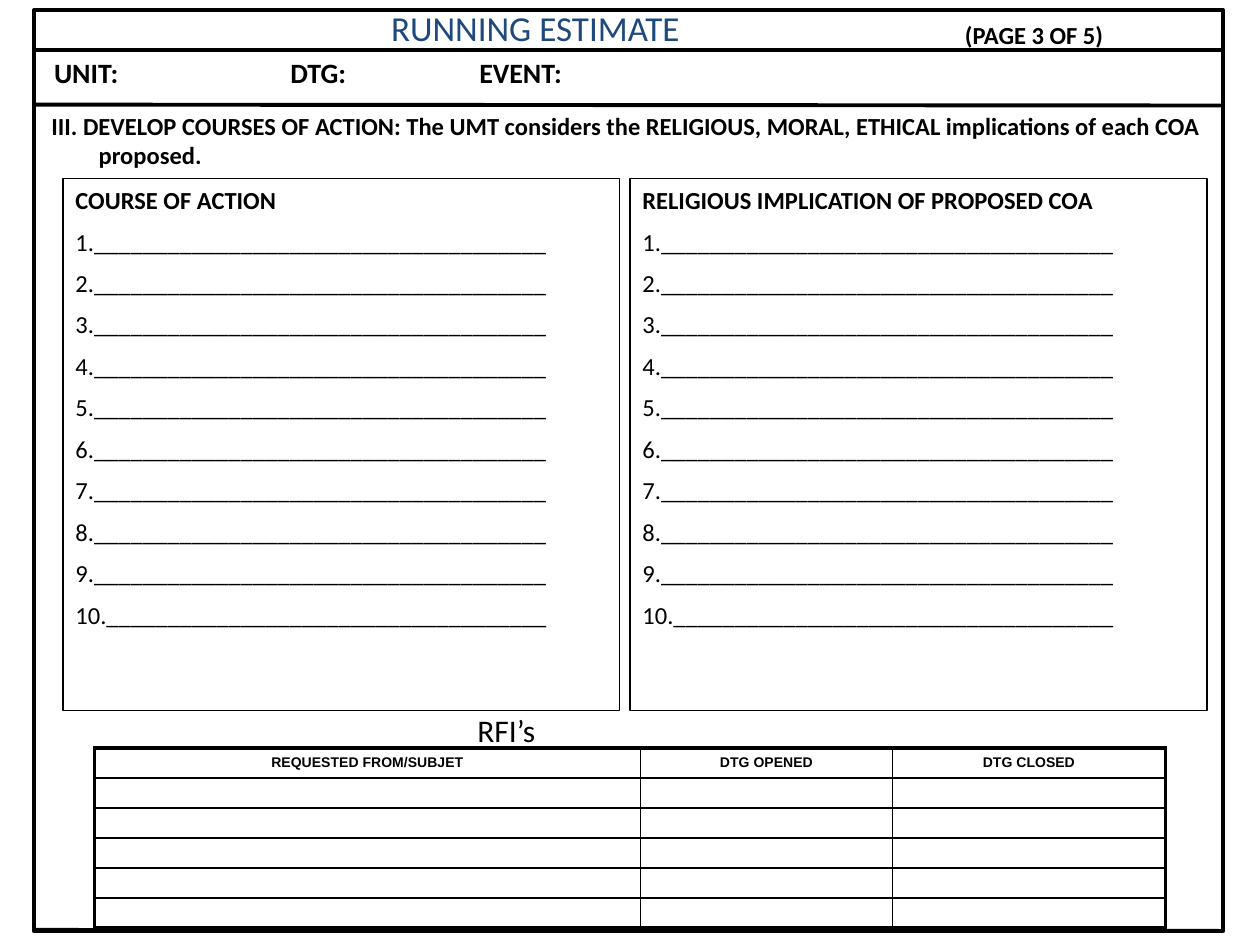
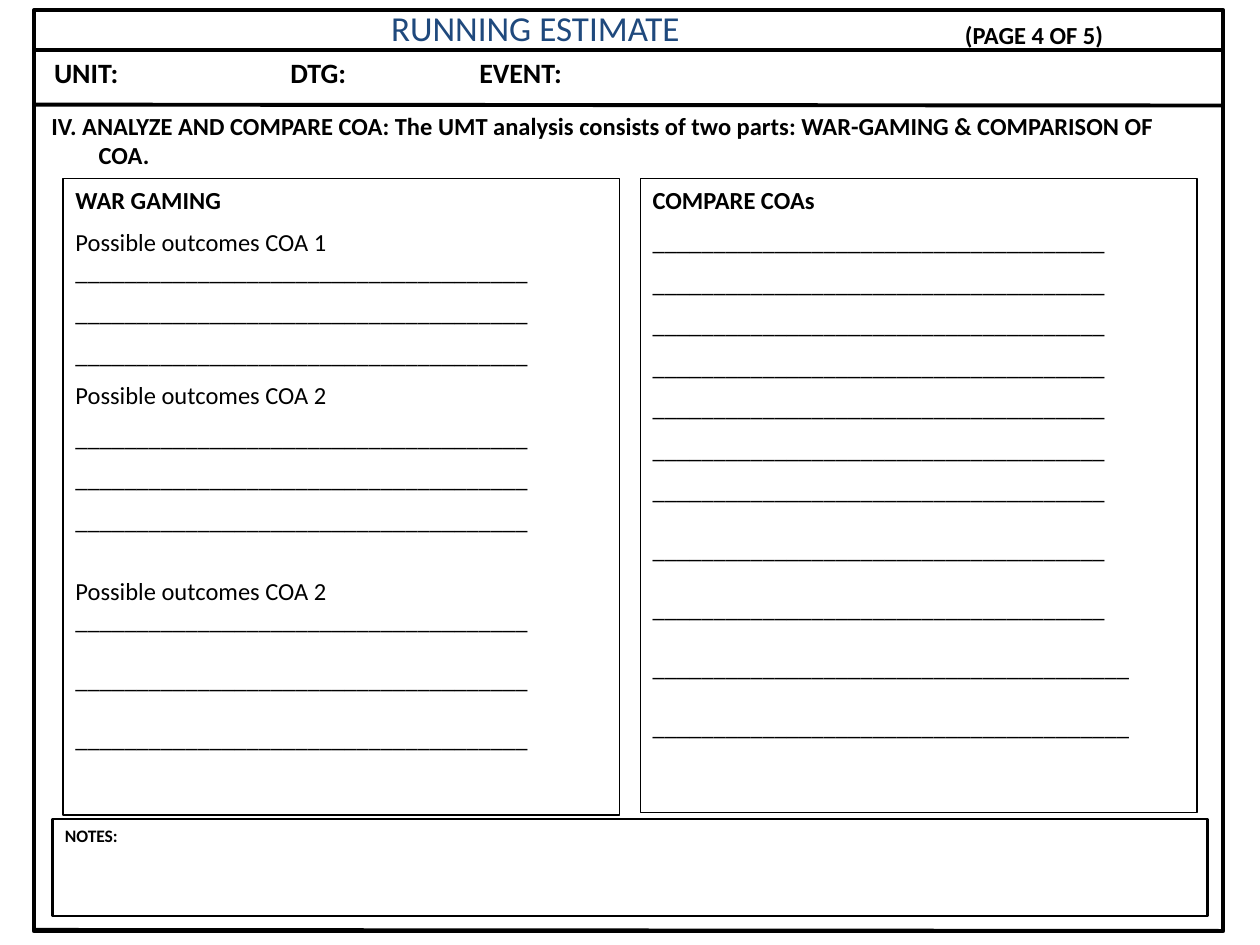
import pptx
import pptx.dml.color
import pptx.enum.shapes
import pptx.enum.text
import pptx.oxml
import pptx.oxml.ns
import pptx.util

Pt = pptx.util.Pt
ALIGN = pptx.enum.text.PP_ALIGN
ANCHOR = pptx.enum.text.MSO_ANCHOR
INK, TITLE_BLUE = "000000", "1F497D"
BODY, TABLE_FONT = "Calibri", "Arial"
FRAME_LINE, NOTES_LINE, PANEL_LINE, GRID_LINE = 2.25, 1.5, 0.75, 1
LINE_STEP, LIST_GAP = 16.9, 6.9  # one 14 pt line, and the gap before a list line
HANGING = 27
RULE = "_" * 37


def color(value):
    return pptx.dml.color.RGBColor.from_string(value)


def assign(target, values):
    for name, value in values.items():
        setattr(target, name, value)


class Form:
    """Holds the form's style and the slide being filled."""

    def __init__(self):
        self.deck = pptx.Presentation()
        assign(self.deck, {"slide_width": Pt(720), "slide_height": Pt(540)})
        self.slide = None

    def new_slide(self):
        self.slide = self.deck.slides.add_slide(self.deck.slide_layouts[6])

    def style_run(self, run, size, bold=False, ink=INK, font=BODY):
        assign(run.font, {"name": font, "size": Pt(size), "bold": bold})
        run.font.color.rgb = color(ink)

    def fill_lines(self, frame, lines, size, align=ALIGN.LEFT, wrap=True, **style):
        """Each line is (text, bold, space before)."""
        assign(frame, {"word_wrap": wrap, "vertical_anchor": ANCHOR.TOP})
        for index, (text, bold, gap) in enumerate(lines):
            paragraph = frame.add_paragraph() if index else frame.paragraphs[0]
            assign(paragraph, {"alignment": align, "space_before": Pt(gap)})
            run = paragraph.add_run()
            run.text = text
            self.style_run(run, size, bold, **style)

    def text(self, box, words, size, bold=False, hanging=0, **style):
        frame = self.slide.shapes.add_textbox(*map(Pt, box)).text_frame
        self.fill_lines(frame, [(words, bold, 0)], size, **style)
        if hanging:
            properties = frame.paragraphs[0]._p.get_or_add_pPr()
            properties.set("marL", str(Pt(hanging)))
            properties.set("indent", str(-Pt(hanging)))

    def panel(self, box, weight, lines=(), size=14):
        kind = pptx.enum.shapes.MSO_SHAPE.RECTANGLE
        panel = self.slide.shapes.add_shape(kind, *map(Pt, box))
        panel.shadow.inherit = False
        panel.fill.background()
        panel.line.color.rgb = color(INK)
        panel.line.width = Pt(weight)
        if lines:
            self.fill_lines(panel.text_frame, lines, size)

    def rule(self, *ends):
        straight = pptx.enum.shapes.MSO_CONNECTOR.STRAIGHT
        rule = self.slide.shapes.add_connector(straight, *map(Pt, ends))
        rule.line.color.rgb = color(INK)
        rule.line.width = Pt(FRAME_LINE)
        rule._element.spPr.append(pptx.oxml.parse_xml(
            f'<a:effectLst {pptx.oxml.ns.nsdecls("a")}/>'))

    def cell_borders(self, cell, weights):
        for side, weight in weights.items():
            cell._tc.get_or_add_tcPr().append(pptx.oxml.parse_xml(
                f'<a:ln{side} {pptx.oxml.ns.nsdecls("a")} w="{Pt(weight)}">'
                f'<a:solidFill><a:srgbClr val="{INK}"/></a:solidFill></a:ln{side}>'))

    def log_table(self, box, headings, widths, row_count):
        shape = self.slide.shapes.add_table(row_count, len(headings), *map(Pt, box))
        log = shape.table
        assign(log, {"first_row": False, "horz_banding": False})
        for column, width in zip(log.columns, widths):
            column.width = Pt(width)
        for row in log.rows:
            row.height = Pt(box[3] / row_count)
        last_row, last_column = row_count - 1, len(headings) - 1
        for r in range(row_count):
            for c, heading in enumerate(headings):
                cell = log.cell(r, c)
                outer = {"L": c == 0, "R": c == last_column,
                         "T": r == 0, "B": r == last_row}
                self.cell_borders(cell, {side: FRAME_LINE if edge else GRID_LINE
                                         for side, edge in outer.items()})
                cell.fill.background()
                if r == 0:
                    self.fill_lines(cell.text_frame, [(heading, True, 0)], 8,
                                    ALIGN.CENTER, font=TABLE_FONT)
                else:
                    # keeps empty rows from growing
                    cell.text_frame.paragraphs[0]._p.append(pptx.oxml.parse_xml(
                        f'<a:endParaRPr {pptx.oxml.ns.nsdecls("a")} sz="800"/>'))

    def page(self, number, heading):
        """Frame, title, header fields and section heading of every page."""
        self.new_slide()
        self.panel((19.4, 5.8, 679.7, 526.3), FRAME_LINE)
        for left, start, end in ((18.7, 28.8, 28.8), (19.4, 531.4, 532),
                                 (19.4, 59.8, 60.3)):
            self.rule(left, start, 697.7, end)
        self.text((544.3, 7.9, 110.2, 24.5), f"(PAGE {number} OF 5)", 14, True,
                  wrap=False)
        self.text((0, 0, 612, 59.8), "RUNNING ESTIMATE", 20, ink=TITLE_BLUE,
                  align=ALIGN.CENTER)
        self.text((23.8, 28.1, 671.8, 20.2), "UNIT:\t \t\tDTG:\t\t\tEVENT:", 16,
                  True, HANGING)
        self.text((22.3, 59.8, 673.9, 41.8), heading, 14, True, HANGING)


def titled(title, lines):
    return [(title, True, 0)] + [(text, False, gap) for text, gap in lines]


def main():
    form = Form()

    # Page 3: courses of action and requests for information
    form.page(3, "III. DEVELOP COURSES OF ACTION: The UMT considers the RELIGIOUS, "
                 "MORAL, ETHICAL implications of each COA proposed.")
    numbered = [(f"{n}.".ljust(39, "_"), LIST_GAP) for n in range(1, 11)]
    for left, width, title in (
            (36, 318.2, "COURSE OF ACTION"),
            (360, 329.8, "RELIGIOUS IMPLICATION OF PROPOSED COA")):
        form.panel((left, 102.2, width, 303.8), PANEL_LINE, titled(title, numbered))
    form.log_table((54, 427.5, 612, 102.9),
                   ("REQUESTED FROM/SUBJET", "DTG OPENED", "DTG CLOSED"),
                   (312, 144, 156), 6)
    form.text((265.7, 402.5, 210.2, 28.8), "RFI’s", 18)

    # Page 4: war gaming, comparison and notes
    form.page(4, "IV. ANALYZE AND COMPARE COA: The UMT analysis consists of two parts: "
                 "WAR-GAMING & COMPARISON OF COA.")
    blank = (RULE, LIST_GAP)
    spaced = (RULE, LINE_STEP)
    outcomes = [
        ("Possible outcomes COA 1 " + RULE, LIST_GAP), *[blank] * 2,
        ("Possible outcomes COA 2", LIST_GAP), *[blank] * 3,
        ("Possible outcomes COA 2", LIST_GAP + LINE_STEP), (RULE, 0), *[spaced] * 2]
    comparison = [blank] * 7 + [spaced] * 2 + [(RULE + "__", LINE_STEP)] * 2
    form.panel((36, 102.2, 318.2, 363.6), PANEL_LINE, titled("WAR GAMING", outcomes))
    form.panel((365.8, 102.2, 318.2, 362.2), PANEL_LINE,
               titled("COMPARE COAs", comparison))
    form.panel((30, 468, 660, 55.4), NOTES_LINE, titled("NOTES:", []), 10)

    form.deck.save("out.pptx")


if __name__ == "__main__":
    main()
